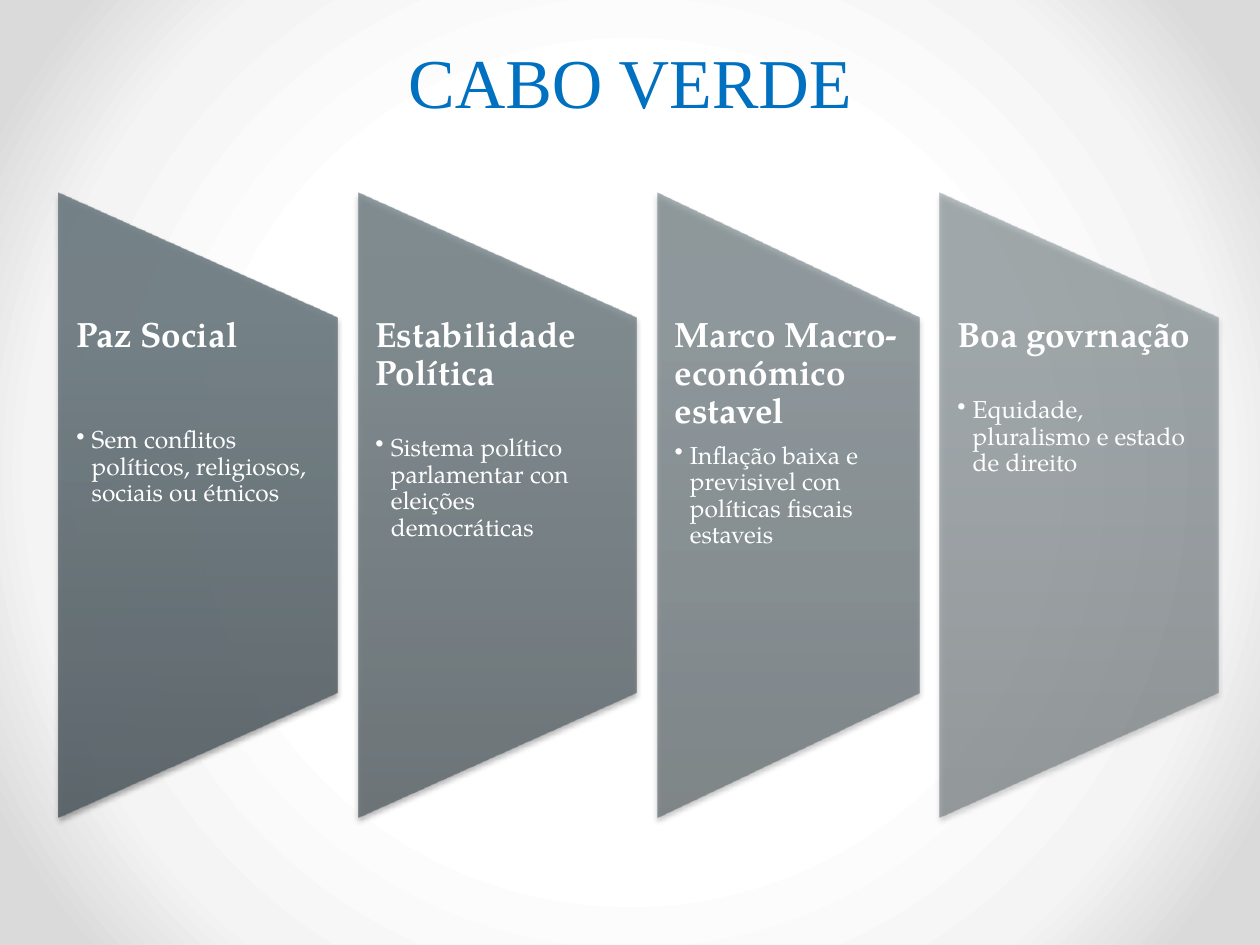
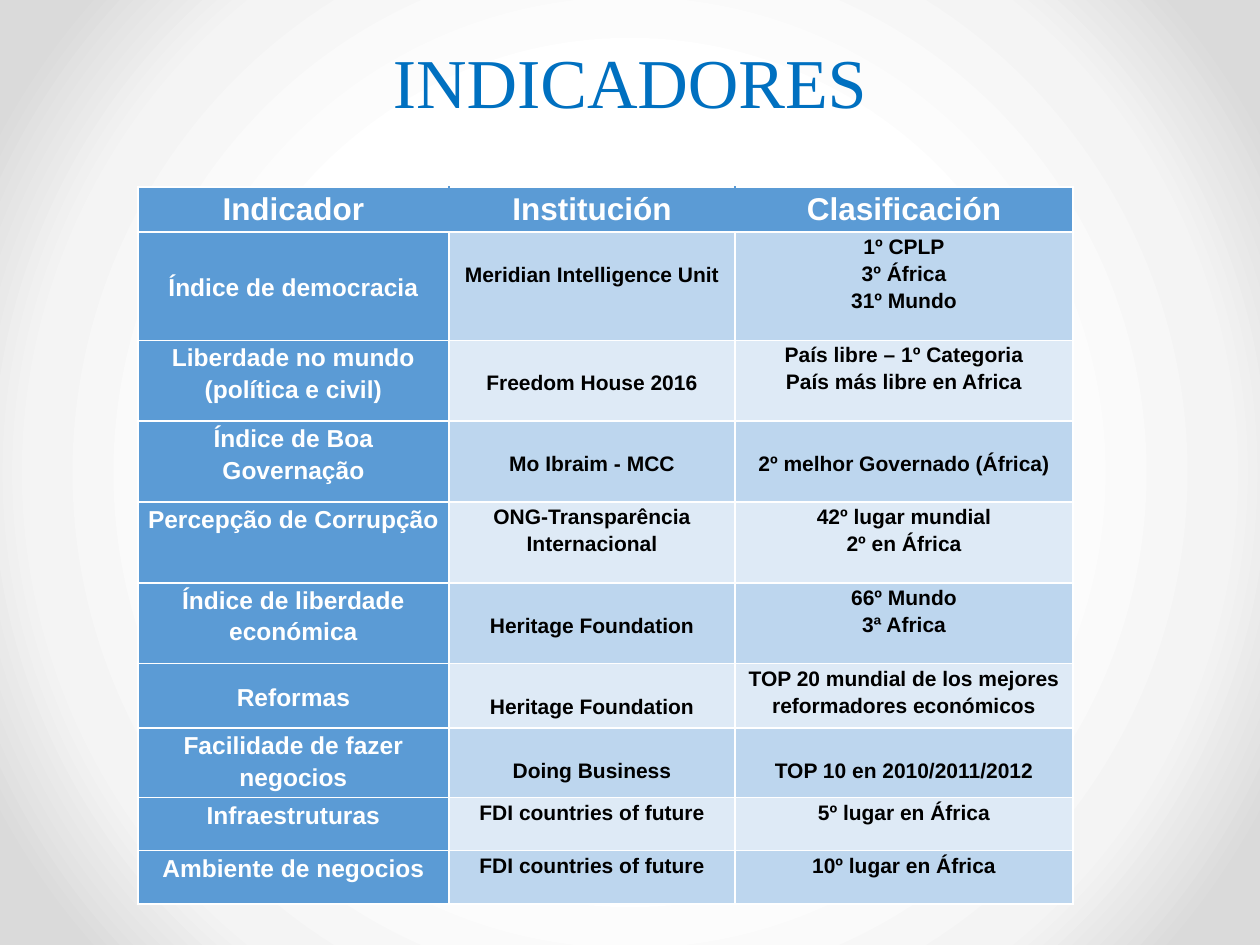
from lxml.etree import SubElement
from pptx import Presentation
from pptx.dml.color import RGBColor
from pptx.enum.shapes import MSO_SHAPE
from pptx.enum.text import MSO_ANCHOR, MSO_AUTO_SIZE, PP_ALIGN
from pptx.oxml import parse_xml
from pptx.oxml.ns import nsdecls, qn
from pptx.util import Cm, Pt

COLOURS = {
    "title": "0070C0",
    "white": "FFFFFF",
    "black": "000000",
    "backdrop_middle": "F4F4F4",
    "backdrop_edge": "DADADA",
    "panel_dark": "566065",
    "panel_mid": "6F7D83",
    "panel_light": "6F7E84",
    "header": "5B9BD5",
    "band_dark": "BDD6EE",
    "band_light": "DEEAF6",
}
TITLE_FONT, PANEL_FONT, TABLE_FONT = "Times New Roman", "TeX Gyre Pagella", "Arial"
INSET = 0.35
BLANK_LINE = 17.2
TABLE_BLANK_LINE = 0.56

PANELS = [
    ("Paz Social", "Sem conflitos políticos, religiosos, sociais ou étnicos", 5.61, 90, 2),
    ("Estabilidade Política", "Sistema político parlamentar con eleições democráticas", 5.61, 77, 1),
    ("Marco Macro-económico estavel", "Inflação baixa e previsivel con políticas fiscais estaveis", 5.28, 63, 0),
    ("Boa govrnação", "Equidade, pluralismo e estado de direito", 5.61, 50, 1),
]

HEADINGS = ["Indicador", "Institución", "Clasificación"]
COLUMN_WIDTHS = [6.27, 5.77, 6.81]
HEADER_HEIGHT = 0.91
INDICATORS = [
    (2.18, ("Índice de democracia", "Meridian Intelligence Unit", "1º CPLP\n3º África\n31º Mundo"), (1,)),
    (1.63, ("Liberdade no mundo (política e civil)", "Freedom House 2016",
            "País libre – 1º Categoria\nPaís más libre en Africa"), (1,)),
    (1.63, ("Índice de Boa Governação", "Mo Ibraim - MCC", "2º melhor Governado (África)"), (1, 2)),
    (1.63, ("Percepção de Corrupção", "ONG-Transparência Internacional",
            "42º lugar mundial\n2º en África"), ()),
    (1.63, ("Índice de liberdade económica", "Heritage Foundation", "66º Mundo\n3ª Africa"), (1,)),
    (1.3, ("Reformas", "Heritage Foundation",
           "TOP 20 mundial de los mejores reformadores económicos"), (1,)),
    (1.4, ("Facilidade de fazer negocios", "Doing Business", "TOP 10 en 2010/2011/2012"), (1, 2)),
    (1.07, ("Infraestruturas", "FDI countries of future", "5º lugar en África"), ()),
    (1.07, ("Ambiente de negocios", "FDI countries of future", "10º lugar en África"), ()),
]
CENTRED_INDICATORS = {"Índice de democracia", "Reformas"}


def colour(name):
    """Return the named colour."""
    return RGBColor.from_string(COLOURS[name])


def gradient(stops, direction, rotates):
    """Build a gradient fill from (position, colour name, opacity) stops."""
    stop_xml = "".join(
        f'<a:gs pos="{position * 1000}"><a:srgbClr val="{COLOURS[name]}">'
        f'<a:alpha val="{opacity * 1000}"/></a:srgbClr></a:gs>'
        for position, name, opacity in stops)
    return parse_xml(f'<a:gradFill {nsdecls("a")} rotWithShape="{rotates}">'
                     f"<a:gsLst>{stop_xml}</a:gsLst>{direction}</a:gradFill>")


def set_backdrop(master):
    """Give the master a circular grey gradient."""
    master.background.fill.solid()
    solid = next(master.element.iter(qn("p:bgPr"))).find(qn("a:solidFill"))
    stops = [(50, "white", 100), (76, "backdrop_middle", 100), (92, "backdrop_edge", 100)]
    direction = '<a:path path="circle"><a:fillToRect l="50000" t="50000" r="50000" b="50000"/></a:path>'
    solid.getparent().replace(solid, gradient(stops, direction, 1))


def set_font(paragraph, name, size, colour_name, bold=False):
    """Format all the text of a paragraph."""
    font = paragraph.font
    font.name, font.size, font.bold = name, Pt(size), bold
    font.color.rgb = colour(colour_name)


def add_titled_slide(presentation, text):
    """Add a title-only slide with the shared title style."""
    slide = presentation.slides.add_slide(presentation.slide_layouts[5])
    title = slide.shapes.title
    title.left, title.top = Cm(0), Cm(0)
    title.width, title.height = presentation.slide_width, Cm(2.59)
    frame = title.text_frame
    frame.text = text
    frame.auto_size = MSO_AUTO_SIZE.NONE
    frame.vertical_anchor = MSO_ANCHOR.BOTTOM
    paragraph = frame.paragraphs[0]
    paragraph.alignment = PP_ALIGN.CENTER
    paragraph.line_spacing = Pt(58)
    set_font(paragraph, TITLE_FONT, 40, "title")
    return slide


def add_panel_shape(slide, left, top, width, height, opacity):
    """Draw a trapezoid turned on its side, with its long edge at the left."""
    shape = slide.shapes.add_shape(
        MSO_SHAPE.FLOWCHART_MANUAL_OPERATION,
        Cm(left + (width - height) / 2), Cm(top + (height - width) / 2), Cm(height), Cm(width))
    shape.rotation = 270
    shape.line.fill.background()
    shape.fill.solid()
    properties = shape.element.spPr
    stops = [(0, "panel_dark", opacity), (80, "panel_mid", opacity), (100, "panel_light", opacity)]
    properties.replace(properties.find(qn("a:solidFill")),
                       gradient(stops, '<a:lin ang="16200000" scaled="0"/>', 0))
    properties.append(parse_xml(
        f'<a:effectLst {nsdecls("a")}><a:outerShdw blurRad="{Pt(3.1)}" dist="{Pt(1.8)}" dir="5400000" '
        f'rotWithShape="0"><a:srgbClr val="{COLOURS["black"]}"><a:alpha val="35000"/></a:srgbClr>'
        "</a:outerShdw></a:effectLst>"))


def add_panel(slide, left, top, height, panel):
    """Add one panel with its heading and bullet."""
    heading, detail, width, opacity, blank_lines = panel
    add_panel_shape(slide, left, top, width, height, opacity)
    box = slide.shapes.add_textbox(Cm(left), Cm(top + height / 5), Cm(width), Cm(height * 3 / 5))
    frame = box.text_frame
    frame.word_wrap = True
    frame.margin_left = frame.margin_right = Cm(INSET)
    frame.margin_top = frame.margin_bottom = 0
    title, bullet = frame.paragraphs[0], frame.add_paragraph()
    title.text, bullet.text = heading, detail
    title.line_spacing = bullet.line_spacing = 0.9
    title.space_after = Pt(7)
    bullet.space_before = Pt(BLANK_LINE * blank_lines)
    properties = bullet._p.get_or_add_pPr()
    properties.set("marL", str(Cm(0.31)))
    properties.set("indent", str(-Cm(0.31)))
    SubElement(properties, qn("a:buChar")).set("char", "•")
    set_font(title, PANEL_FONT, 20, "white", True)
    set_font(bullet, PANEL_FONT, 14, "white")


def add_panels(slide, left, top, height, gap):
    """Lay the panels in a row with equal gaps."""
    for panel in PANELS:
        add_panel(slide, left, top, height, panel)
        left += panel[2] + gap


def set_borders(cell, names):
    """Set one-point cell borders in the order left, right, top, bottom."""
    properties = cell._tc.get_or_add_tcPr()
    for index, (side, name) in enumerate(zip("LRTB", names)):
        properties.insert(index, parse_xml(
            f'<a:ln{side} {nsdecls("a")} w="{Pt(1)}"><a:solidFill>'
            f'<a:srgbClr val="{COLOURS[name]}"/></a:solidFill></a:ln{side}>'))


def fill_cell(cell, text, size, text_colour, fill, borders, top=0.0):
    """Write and format one table cell."""
    cell.margin_left = cell.margin_right = Cm(0.13)
    cell.margin_top, cell.margin_bottom = Cm(top), 0
    cell.fill.solid()
    cell.fill.fore_color.rgb = colour(fill)
    set_borders(cell, borders)
    cell.text_frame.text = text
    for paragraph in cell.text_frame.paragraphs:
        paragraph.alignment = PP_ALIGN.CENTER
        paragraph.line_spacing = 1.15
        set_font(paragraph, TABLE_FONT, size, text_colour, True)


def add_indicator_table(slide, left, top):
    """Add the table of indicators."""
    heights = [HEADER_HEIGHT] + [height for height, _, _ in INDICATORS]
    table = slide.shapes.add_table(
        len(heights), len(HEADINGS), Cm(left), Cm(top), Cm(sum(COLUMN_WIDTHS)), Cm(sum(heights))).table
    table.horz_banding = False
    for column, width in zip(table.columns, COLUMN_WIDTHS):
        column.width = Cm(width)
    for row, height in zip(table.rows, heights):
        row.height = Cm(height)
    last = len(HEADINGS) - 1
    for column, heading in enumerate(HEADINGS):
        borders = ("header" if column else "white", "header" if column < last else "white", "white", "white")
        fill_cell(table.cell(0, column), heading, 18, "white", "header", borders)
    for row, (_, texts, lowered) in enumerate(INDICATORS, 1):
        band = "band_dark" if row % 2 else "band_light"
        for column, text in enumerate(texts):
            style = (12, "black", band) if column else (14, "white", "header")
            top_inset = TABLE_BLANK_LINE if column in lowered else 0
            fill_cell(table.cell(row, column), text, *style, ["white"] * 4, top_inset)
        if texts[0] in CENTRED_INDICATORS:
            table.cell(row, 0).vertical_anchor = MSO_ANCHOR.MIDDLE


def main():
    """Build and save the presentation."""
    presentation = Presentation()
    presentation.slide_width, presentation.slide_height = Cm(25.4), Cm(19.05)
    set_backdrop(presentation.slide_master)
    add_panels(add_titled_slide(presentation, "CABO VERDE"), left=1.19, top=3.88, height=12.6, gap=0.42)
    add_indicator_table(add_titled_slide(presentation, "INDICADORES"), left=2.78, top=3.77)
    presentation.save("out.pptx")


if __name__ == "__main__":
    main()
